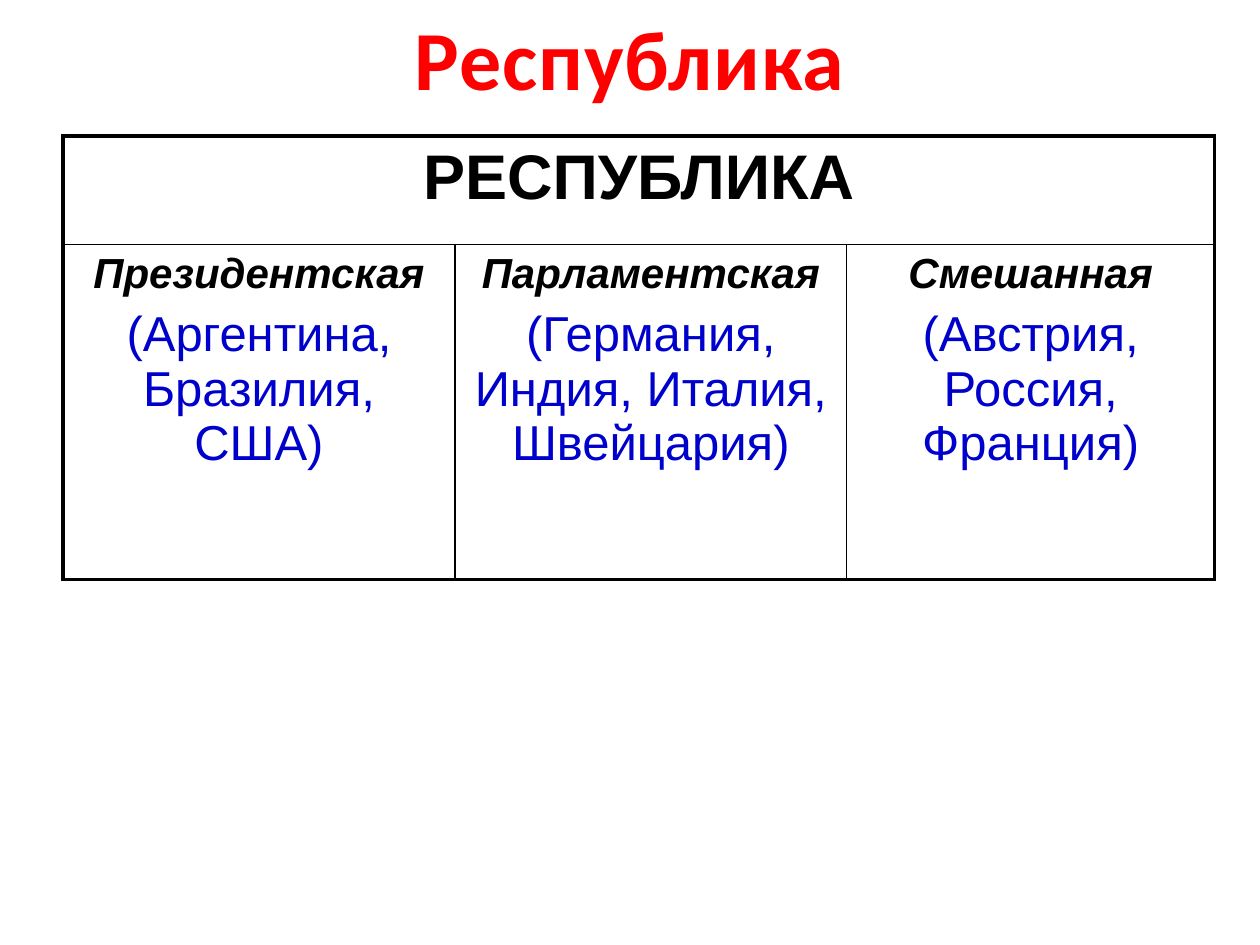
from lxml import etree
from pptx import Presentation
from pptx.dml.color import RGBColor as Rgb
from pptx.enum.text import MSO_ANCHOR as Anchor, MSO_AUTO_SIZE as Fit, PP_ALIGN as Align
from pptx.oxml.ns import qn
from pptx.util import Inches, Pt

TITLE = "Республика"
HEAD = "РЕСПУБЛИКА"
KINDS = [
    ("Президентская", "(Аргентина, Бразилия, США)"),
    ("Парламентская", "(Германия, Индия, Италия, Швейцария)"),
    ("Смешанная", "(Австрия, Россия, Франция)"),
]
COLORS = {"title": "FF0000", "text": "000000", "lands": "0000CC", "line": "000000"}
WIDTHS = [3.11, 3.11, 2.92]
HEIGHTS = [0.86, 2.66]
LEFT, TOP = 0.5, 1.08
THICK, THIN = 2.25, 1


def style(par, size, color, face="Arial", bold=False, italic=False):
    par.alignment = Align.CENTER
    for run in par.runs:
        font = run.font
        font.name, font.size = face, Pt(size)
        font.bold, font.italic = bold, italic
        font.color.rgb = Rgb.from_string(COLORS[color])


def border(cell, row, col):
    """Draw thick lines on the outer edge of the table and thin ones inside."""
    outer = {
        "L": col == 0,
        "R": col == len(WIDTHS) - 1,
        "T": row == 0,
        "B": row == len(HEIGHTS) - 1,
    }
    props = cell._tc.get_or_add_tcPr()
    for spot, (side, edge) in enumerate(outer.items()):
        line = etree.Element(qn(f"a:ln{side}"), w=str(Pt(THICK if edge else THIN)))
        fill = etree.SubElement(line, qn("a:solidFill"))
        etree.SubElement(fill, qn("a:srgbClr"), val=COLORS["line"])
        props.insert(spot, line)


def add_title(slide):
    title = slide.shapes.title
    title.left, title.top = Inches(0), Inches(0)
    title.width, title.height = Inches(10), Inches(0.91)
    frame = title.text_frame
    frame.text = TITLE
    frame.word_wrap = True
    frame.auto_size = Fit.SHAPE_TO_FIT_TEXT
    frame.vertical_anchor = Anchor.TOP
    par = frame.paragraphs[0]
    style(par, 48, "title", "Calibri", bold=True)
    par.runs[0].font._element.set("spc", "50")


def add_kinds(slide):
    table = slide.shapes.add_table(
        len(HEIGHTS), len(WIDTHS), Inches(LEFT), Inches(TOP),
        Inches(sum(WIDTHS)), Inches(sum(HEIGHTS))).table
    table.first_row = table.horz_banding = False
    for col, width in zip(table.columns, WIDTHS):
        col.width = Inches(width)
    for row, height in zip(table.rows, HEIGHTS):
        row.height = Inches(height)

    head = table.cell(0, 0)
    head.merge(table.cell(0, len(WIDTHS) - 1))
    head.text_frame.text = HEAD
    style(head.text_frame.paragraphs[0], 36, "text", bold=True)

    for col, (kind, lands) in enumerate(KINDS):
        frame = table.cell(1, col).text_frame
        frame.text = kind
        style(frame.paragraphs[0], 24, "text", bold=True, italic=True)
        par = frame.add_paragraph()
        par.text = lands
        par.space_before = Pt(5.6)
        style(par, 28, "lands")

    for row in range(len(HEIGHTS)):
        for col in range(len(WIDTHS)):
            cell = table.cell(row, col)
            cell.fill.background()
            border(cell, row, col)
    # The merged head takes its right edge from its own cell
    right = head._tc.tcPr.find(qn("a:lnR"))
    right.set("w", str(Pt(THICK)))


def main():
    deck = Presentation()
    deck.slide_width, deck.slide_height = Inches(10), Inches(7.5)
    slide = deck.slides.add_slide(deck.slide_layouts[5])
    add_title(slide)
    add_kinds(slide)
    deck.save("out.pptx")


if __name__ == "__main__":
    main()
